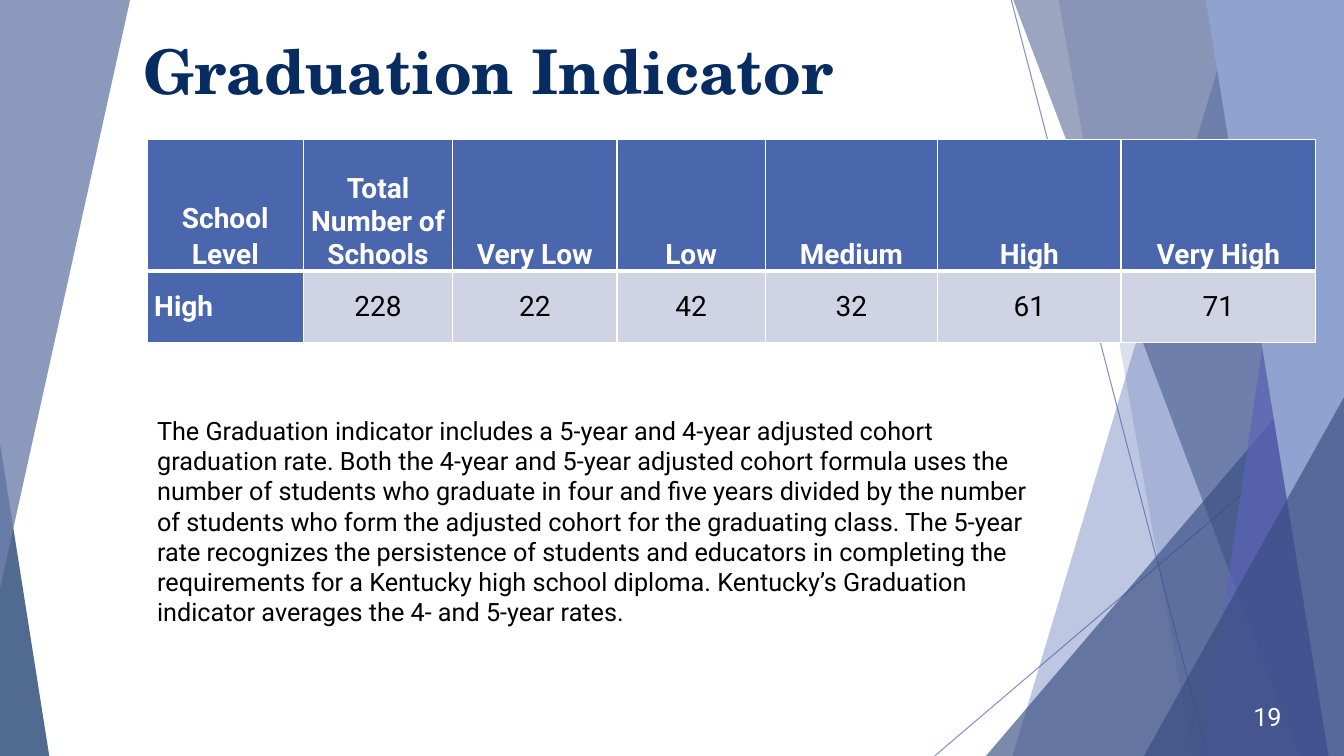
import lxml.etree
import pptx
import pptx.dml.color
import pptx.enum.shapes
import pptx.enum.text
import pptx.oxml.ns
import pptx.util

PX = 9144  # EMU per px, at 100 px to the inch
WHITE = pptx.dml.color.RGBColor(0xFF, 0xFF, 0xFF)
BLACK = pptx.dml.color.RGBColor(0x00, 0x00, 0x00)
NAVY = pptx.dml.color.RGBColor(0x07, 0x2C, 0x62)
BLUE = pptx.dml.color.RGBColor(0x4A, 0x66, 0xAC)
DARK_BLUE = pptx.dml.color.RGBColor(0x38, 0x4C, 0x81)
VIOLET = pptx.dml.color.RGBColor(0x5C, 0x64, 0xB7)
LIGHT_BLUE = pptx.dml.color.RGBColor(0x90, 0xA2, 0xCF)
SLATE = pptx.dml.color.RGBColor(0x6F, 0x81, 0xAC)
PALE = pptx.dml.color.RGBColor(0xD0, 0xD3, 0xE3)
BODY_FONT = "Roboto"
qn = pptx.oxml.ns.qn


def set_opacity(fill_parent, percent):
    """Make the solid colour inside an spPr or ln element translucent."""
    color = fill_parent.find(qn("a:solidFill"))[0]
    lxml.etree.SubElement(color, qn("a:alpha"), val=str(percent * 1000))


def format_text(text_frame, size, color, font=BODY_FONT, bold=False):
    for paragraph in text_frame.paragraphs:
        for run in paragraph.runs:
            run.font.name = font
            run.font.size = pptx.util.Pt(size)
            run.font.bold = bold
            run.font.color.rgb = color


presentation = pptx.Presentation()
presentation.slide_width = 1333 * PX
presentation.slide_height = 750 * PX
slide = presentation.slides.add_slide(presentation.slide_layouts[5])
shapes = slide.shapes

# Thin background lines
for ends in [(1003, 0, 1198, 750), (1333, 404, 927, 750)]:
    line = shapes.add_connector(
        pptx.enum.shapes.MSO_CONNECTOR.STRAIGHT, *[value * PX for value in ends])
    line.line.color.rgb = BLUE
    line.line.width = pptx.util.Pt(0.75)
    properties = line.element.spPr
    set_opacity(properties.find(qn("a:ln")), 70)
    lxml.etree.SubElement(properties, qn("a:effectLst"))

# Facets from back to front: bands by top and bottom left corner, reaching the
# right edge; triangles by left, top, width, height, apex and vertical flip
facets = [
    ("band", (1228, 1004), BLUE, 36),
    ("band", (1050, 1183), BLUE, 20),
    ("triangle", (977, 334, 356, 417, 1, False), DARK_BLUE, 66),
    ("band", (1005, 1289), DARK_BLUE, 50),
    ("band", (1303, 1192), VIOLET, 70),
    ("band", (1196, 1318), LIGHT_BLUE, 100),
    ("triangle", (1134, 394, 199, 357, 1, False), DARK_BLUE, 66),
    ("triangle", (0, 440, 49, 311, 0, False), NAVY, 70),
    ("triangle", (0, 0, 129, 584, 0, True), SLATE, 80),
]
for kind, geometry, color, opacity in facets:
    if kind == "band":
        top_x, bottom_x = geometry
        builder = shapes.build_freeform(top_x, 0, scale=PX)
        builder.add_line_segments([(1333, 0), (1333, 751), (bottom_x, 751)], close=True)
        facet = builder.convert_to_shape()
    else:
        *box, apex, flipped = geometry
        facet = shapes.add_shape(
            pptx.enum.shapes.MSO_SHAPE.ISOSCELES_TRIANGLE, *[value * PX for value in box])
        facet.adjustments[0] = apex
        if flipped:
            facet.element.spPr.find(qn("a:xfrm")).set("flipV", "1")
    facet.shadow.inherit = False
    facet.line.fill.background()
    facet.fill.solid()
    facet.fill.fore_color.rgb = color
    if opacity < 100:
        set_opacity(facet.element.spPr, opacity)

title = shapes.title
title.left, title.top, title.width, title.height = [
    value * PX for value in (132, 28, 869, 144)]
title.text_frame.text = "Graduation Indicator"
title.text_frame.vertical_anchor = pptx.enum.text.MSO_ANCHOR.TOP
title.text_frame.paragraphs[0].alignment = pptx.enum.text.PP_ALIGN.LEFT
format_text(title.text_frame, 44, NAVY, "TeX Gyre Schola", True)

page_number = shapes.add_textbox(1206 * PX, 691 * PX, 75 * PX, 40 * PX)
page_number.text_frame.text = "19"
page_number.text_frame.word_wrap = True
page_number.text_frame.vertical_anchor = pptx.enum.text.MSO_ANCHOR.MIDDLE
page_number.text_frame.paragraphs[0].alignment = pptx.enum.text.PP_ALIGN.RIGHT
format_text(page_number.text_frame, 18, WHITE)

rows = [
    ["School Level", "Total Number of Schools", "Very Low", "Low", "Medium", "High",
     "Very High"],
    ["High", "228", "22", "42", "32", "61", "71"],
]
column_widths = [155, 148, 163, 147, 171, 182, 193]
row_heights = [131, 71]
table = shapes.add_table(
    len(rows), len(column_widths), 146 * PX, 138 * PX,
    sum(column_widths) * PX, sum(row_heights) * PX).table
for column, width in zip(table.columns, column_widths):
    column.width = width * PX
for row, height in zip(table.rows, row_heights):
    row.height = height * PX

for row_index, row in enumerate(rows):
    for column_index, text in enumerate(row):
        in_header = row_index == 0
        is_label = in_header or column_index == 0
        cell = table.cell(row_index, column_index)
        cell.text_frame.text = text
        cell.margin_left = cell.margin_right = 7 * PX
        cell.margin_top = cell.margin_bottom = 0
        cell.vertical_anchor = (
            pptx.enum.text.MSO_ANCHOR.BOTTOM if in_header
            else pptx.enum.text.MSO_ANCHOR.MIDDLE)
        cell.text_frame.paragraphs[0].alignment = (
            pptx.enum.text.PP_ALIGN.CENTER if in_header or column_index > 0
            else pptx.enum.text.PP_ALIGN.LEFT)
        format_text(cell.text_frame, 20, WHITE if is_label else BLACK, bold=is_label)
        # Borders come before the fill in the cell's XML
        cell_properties = cell._tc.get_or_add_tcPr()
        for side in "LRTB":
            thick = (row_index, side) in [(0, "B"), (1, "T")]
            border = lxml.etree.SubElement(
                cell_properties, qn("a:ln" + side),
                w=str(pptx.util.Pt(3 if thick else 1)))
            border_fill = lxml.etree.SubElement(border, qn("a:solidFill"))
            lxml.etree.SubElement(border_fill, qn("a:srgbClr"), val=str(WHITE))
        cell.fill.solid()
        cell.fill.fore_color.rgb = BLUE if is_label else PALE
table.cell(0, 0).text_frame.paragraphs[0].line_spacing = 1.07

explanation = shapes.add_textbox(146 * PX, 407 * PX, 898 * PX, 252 * PX)
explanation.text_frame.word_wrap = True
explanation.text_frame.text = (
    "The Graduation indicator includes a 5-year and 4-year adjusted cohort graduation "
    "rate. Both the 4-year and 5-year adjusted cohort formula uses the number of students "
    "who graduate in four and five years divided by the number of students who form the "
    "adjusted cohort for the graduating class. The 5-year rate recognizes the persistence "
    "of students and educators in completing the requirements for a Kentucky high school "
    "diploma. Kentucky’s Graduation indicator averages the 4- and 5-year rates.")
format_text(explanation.text_frame, 18, BLACK)

presentation.save("out.pptx")
